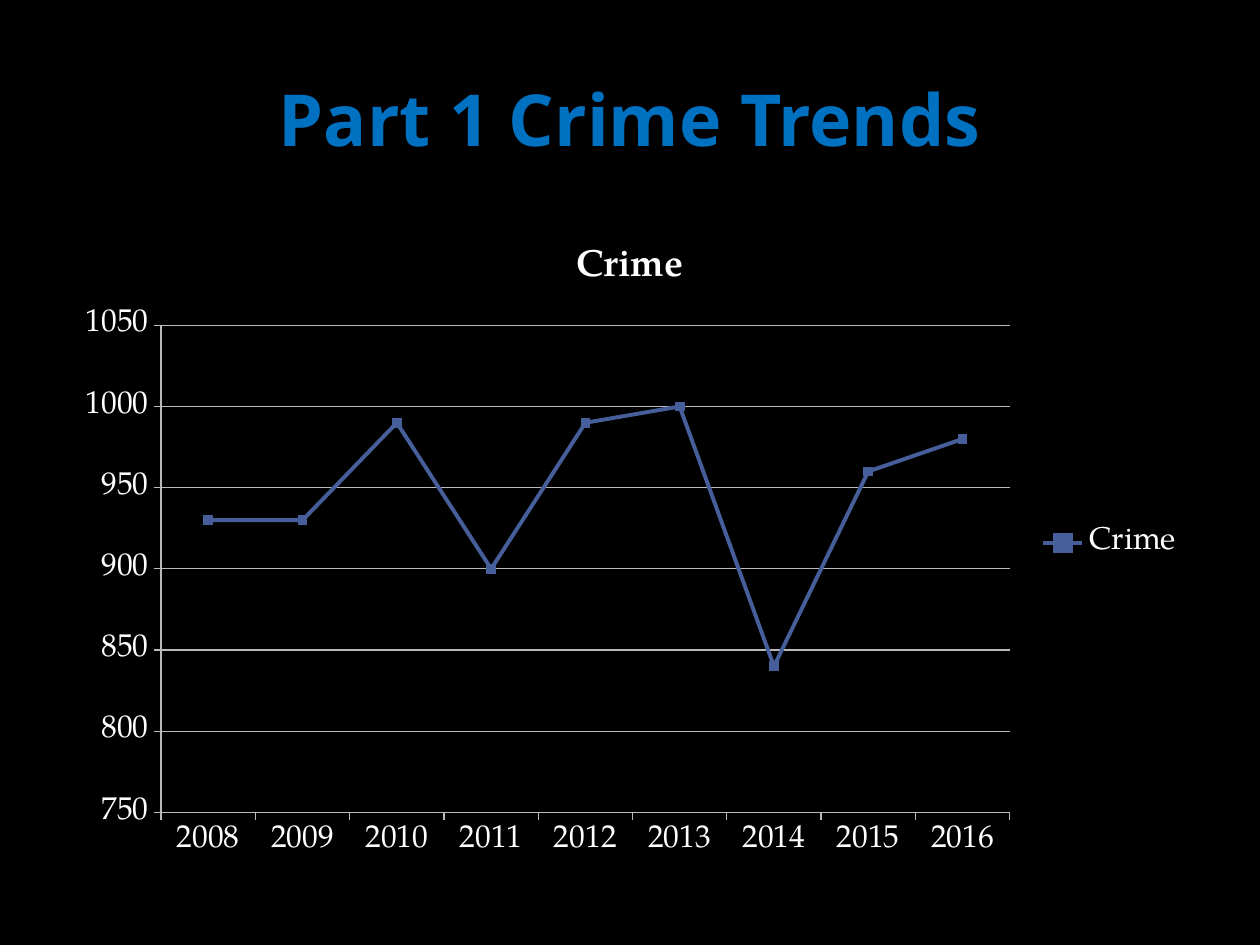
from dataclasses import dataclass

from lxml import etree
from pptx import Presentation
from pptx import util as u
from pptx.chart import data
from pptx.dml.color import RGBColor
from pptx.enum import chart as charts, text
from pptx.slide import Slide

BLACK = RGBColor(0x00, 0x00, 0x00)
WHITE = RGBColor(0xFF, 0xFF, 0xFF)
HEADING_BLUE = RGBColor(0x00, 0x70, 0xC0)
TREND_BLUE = RGBColor(0x46, 0x5F, 0x9A)
RULE_GREY = RGBColor(0xB9, 0xB9, 0xB9)

WIDTH, HEIGHT = u.Inches(10), u.Inches(7.5)
YEARS = [str(year) for year in range(2008, 2017)]
CRIMES = [930, 930, 990, 900, 990, 1000, 840, 960, 980]


def style_font(font, size, color=WHITE, name="TeX Gyre Pagella", bold=False):
    font.size, font.name, font.bold = u.Pt(size), name, bold
    font.color.rgb = color


def write(frame, words, align=text.PP_ALIGN.CENTER, **font_format):
    paragraph = frame.paragraphs[0]
    paragraph.alignment = align
    run = paragraph.add_run()
    run.text = words
    style_font(run.font, **font_format)


def style_line(line, color=RULE_GREY, width=0.75):
    line.color.rgb, line.width = color, u.Pt(width)


@dataclass
class CrimeSlide:
    """Hold the style and the current slide, placing elements by shares of its size."""

    slide: Slide
    body_size: float = 18
    left: float = 0.05
    width: float = 0.9

    def area(self, top, height):
        return [int(length) for length in (
            self.left * WIDTH, top * HEIGHT, self.width * WIDTH, height * HEIGHT)]

    def background(self, color):
        fill = self.slide.background.fill
        fill.solid()
        fill.fore_color.rgb = color

    def heading(self, words, top, height):
        frame = self.slide.shapes.add_textbox(*self.area(top, height)).text_frame
        frame.word_wrap = True
        frame.vertical_anchor = text.MSO_ANCHOR.MIDDLE
        write(frame, words, size=41, name="Open Sans", color=HEADING_BLUE, bold=True)

    def trend(self, name, categories, values, top, height):
        figures = data.CategoryChartData()
        figures.categories = categories
        figures.add_series(name, values)
        chart = self.slide.shapes.add_chart(
            charts.XL_CHART_TYPE.LINE_MARKERS, *self.area(top, height), figures).chart
        style_font(chart.font, self.body_size)
        chart.has_title = True
        write(chart.chart_title.text_frame, name, size=21.6, bold=True)
        chart.chart_title.include_in_layout = False

        chart.has_legend = True
        chart.legend.position = charts.XL_LEGEND_POSITION.RIGHT
        chart.legend.include_in_layout = False
        style_font(chart.legend.font, self.body_size)

        for axis in (chart.category_axis, chart.value_axis):
            axis.major_tick_mark = charts.XL_TICK_MARK.OUTSIDE
            axis.minor_tick_mark = charts.XL_TICK_MARK.NONE
            style_font(axis.tick_labels.font, self.body_size)
            style_line(axis.format.line)
        counts = chart.value_axis
        counts.minimum_scale, counts.maximum_scale, counts.major_unit = 750, 1050, 50
        counts.has_major_gridlines = True
        style_line(counts.major_gridlines.format.line)

        chart.plots[0].vary_by_categories = False
        series = chart.plots[0].series[0]
        series.smooth = False
        style_line(series.format.line, TREND_BLUE, 2.25)
        marker = series.marker
        marker.style, marker.size = charts.XL_MARKER_STYLE.SQUARE, 5
        marker.format.fill.solid()
        marker.format.fill.fore_color.rgb = TREND_BLUE
        style_line(marker.format.line, TREND_BLUE)


def main():
    deck = Presentation()
    deck.slide_width, deck.slide_height = WIDTH, HEIGHT
    page = CrimeSlide(deck.slides.add_slide(deck.slide_layouts[6]))
    page.background(BLACK)
    page.heading("Part 1 Crime Trends", top=0.04, height=0.17)
    page.trend("Crime", YEARS, CRIMES, top=0.23, height=0.69)
    deck.save("out.pptx")


if __name__ == "__main__":
    main()
